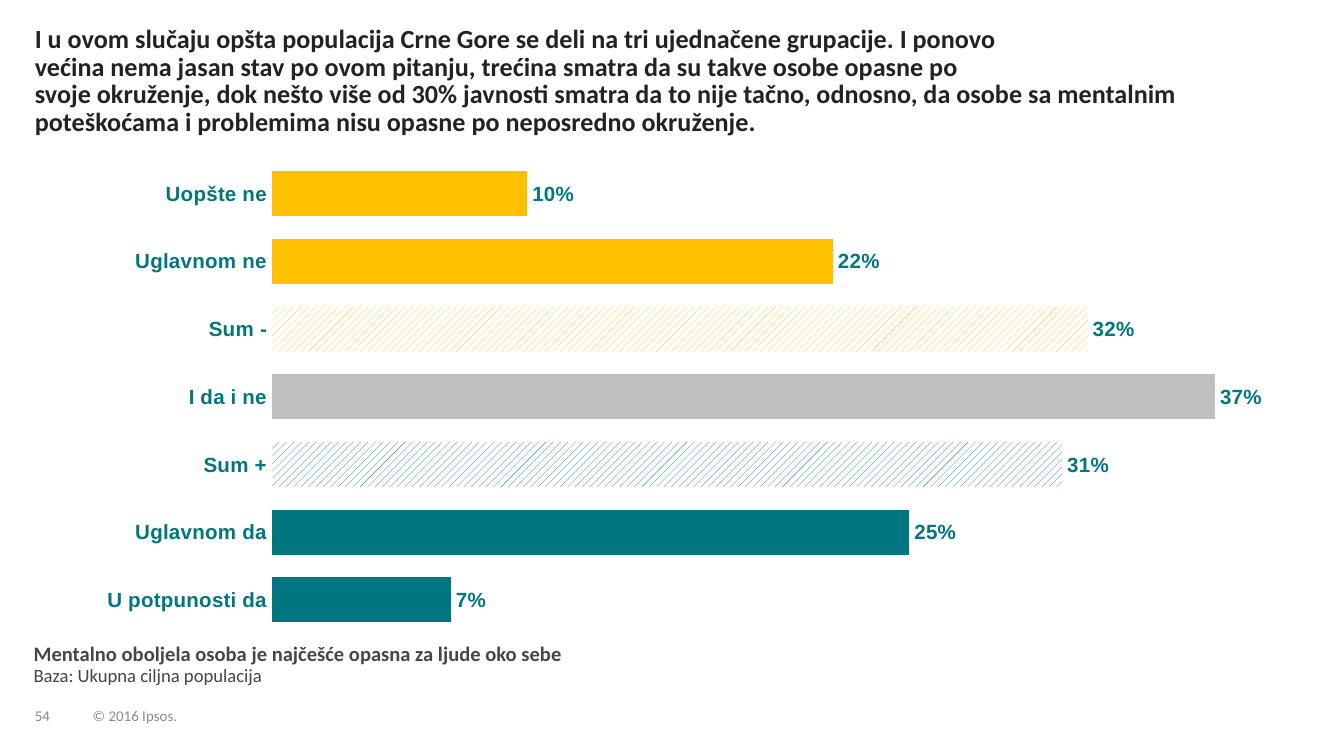
import pptx
import pptx.chart.data
import pptx.dml.color
import pptx.enum.chart
import pptx.enum.dml
import pptx.enum.text
import pptx.oxml
import pptx.oxml.ns
import pptx.util
from pptx.util import Inches

TEAL, YELLOW, GRAY = "007681", "FFC000", "BFBFBF"
HEADLINE, BODY, FOOTER = "222223", "444647", "888B8D"

ANSWERS = [
    ("Uopšte ne", 10, YELLOW, False),
    ("Uglavnom ne", 22, YELLOW, False),
    ("Sum -", 32, YELLOW, True),
    ("I da i ne", 37, GRAY, False),
    ("Sum +", 31, TEAL, True),
    ("Uglavnom da", 25, TEAL, False),
    ("U potpunosti da", 7, TEAL, False),
]


def rgb(color):
    """Turn a hex string into a colour."""
    return pptx.dml.color.RGBColor.from_string(color)


def style_font(font, name, size, color, bold=False):
    """Set the face, size, colour and weight of a font."""
    font.name = name
    font.size = pptx.util.Pt(size)
    font.bold = bold
    font.color.rgb = rgb(color)


def add_text(slide, box, text, size, color, bold=False, spacing=0.9, anchor="TOP"):
    """Add a text box without margins and return its paragraph."""
    shape = slide.shapes.add_textbox(*map(Inches, box))
    frame = shape.text_frame
    frame.margin_left = frame.margin_top = frame.margin_right = frame.margin_bottom = 0
    frame.word_wrap = True
    frame.vertical_anchor = pptx.enum.text.MSO_ANCHOR[anchor]
    paragraph = frame.paragraphs[0]
    paragraph.line_spacing = spacing
    paragraph.add_run().text = text
    style_font(paragraph.font, "Calibri", size, color, bold)
    return paragraph


def add_headline(slide, left, top, width):
    """Add the narrow opening and the full-width rest of the headline."""
    add_text(
        slide, (left, top, 7.17, 0.42),
        "I u ovom slučaju opšta populacija Crne Gore se deli na tri ujednačene grupacije. "
        "I ponovo većina nema jasan stav po ovom pitanju, trećina smatra da su takve "
        "osobe opasne po", 14, HEADLINE, True)
    add_text(
        slide, (left, top + 0.41, width, 0.42),
        "svoje okruženje, dok nešto više od 30% javnosti smatra da to nije tačno, odnosno, "
        "da osobe sa mentalnim poteškoćama i problemima nisu opasne po neposredno okruženje.",
        14, HEADLINE, True)


def place_plot(chart, x, y, width, height):
    """Fix the inner plot area as fractions of the chart."""
    plot_area = chart._chartSpace.chart.plotArea
    for layout in plot_area.findall(pptx.oxml.ns.qn("c:layout")):
        plot_area.remove(layout)
    values = "".join(
        f'<c:{tag} val="{value}"/>'
        for tag, value in (("x", x), ("y", y), ("w", width), ("h", height)))
    plot_area.insert(0, pptx.oxml.parse_xml(
        f'<c:layout {pptx.oxml.ns.nsdecls("c")}><c:manualLayout>'
        '<c:layoutTarget val="inner"/><c:xMode val="edge"/><c:yMode val="edge"/>'
        f'{values}</c:manualLayout></c:layout>'))


def add_answer_chart(slide, box):
    """Add the bar chart of answers, with hatched bars for the sums."""
    data = pptx.chart.data.CategoryChartData(number_format='0"%"')
    data.categories = [answer[0] for answer in ANSWERS]
    data.add_series("Series 1", [answer[1] for answer in ANSWERS])
    chart = slide.shapes.add_chart(
        pptx.enum.chart.XL_CHART_TYPE.BAR_CLUSTERED, *map(Inches, box), data).chart
    chart.has_legend = False
    chart.has_title = False
    style_font(chart.font, "Arial", 17, "000000", True)
    place_plot(chart, 0.186, 0.024, 0.798, 0.956)

    category_axis = chart.category_axis
    category_axis.reverse_order = True
    category_axis.major_tick_mark = pptx.enum.chart.XL_TICK_MARK.NONE
    category_axis.format.line.fill.background()
    style_font(category_axis.tick_labels.font, "Arial", 11, TEAL, True)

    value_axis = chart.value_axis
    value_axis.minimum_scale = 0
    value_axis.maximum_scale = 40
    value_axis.has_major_gridlines = False
    value_axis.visible = False

    plot = chart.plots[0]
    plot.gap_width = 50
    plot.vary_by_categories = False
    series = plot.series[0]
    series.invert_if_negative = False
    labels = series.data_labels
    labels.show_value = True
    labels.number_format = '0"%"'
    labels.number_format_is_linked = False
    labels.position = pptx.enum.chart.XL_LABEL_POSITION.OUTSIDE_END
    style_font(labels.font, "Arial", 11, TEAL, True)

    for index, (_, _, color, hatched) in enumerate(ANSWERS):
        fill = series.points[index].format.fill
        if hatched:
            fill.patterned()
            fill.pattern = pptx.enum.dml.MSO_PATTERN.WIDE_UPWARD_DIAGONAL
            fill.fore_color.rgb = rgb(color)
            fill.back_color.rgb = rgb("FFFFFF")
        else:
            fill.solid()
            fill.fore_color.rgb = rgb(color)


def add_question(slide, box):
    """Add the survey question with its base underneath."""
    paragraph = add_text(
        slide, box, "Mentalno oboljela osoba je najčešće opasna za ljude oko sebe",
        11, BODY, spacing=0.95)
    paragraph.runs[0].font.bold = True
    paragraph.add_line_break()
    base = paragraph.add_run()
    base.text = "Baza: Ukupna ciljna populacija"
    base.font.size = pptx.util.Pt(10)


def add_footer(slide, left, bottom):
    """Add the page number and the copyright line on one baseline."""
    for offset, width, height, text in (
            (0, 0.34, 0.26, "54"), (0.43, 0.76, 0.18, "© 2016 Ipsos.")):
        add_text(slide, (left + offset, bottom - height, width, height), text,
                 8, FOOTER, spacing=0.85, anchor="BOTTOM")


def main():
    """Build the slide and save it."""
    presentation = pptx.Presentation()
    presentation.slide_width = Inches(10)
    presentation.slide_height = Inches(10 * 9 / 16)
    slide = presentation.slides.add_slide(presentation.slide_layouts[6])
    add_footer(slide, 0.26, 5.39)
    add_headline(slide, 0.26, 0.19, 9.5)
    add_question(slide, (0.25, 4.78, 9.51, 0.47))
    add_answer_chart(slide, (0.26, 1.1, 9.5, 3.69))
    presentation.save("out.pptx")


if __name__ == "__main__":
    main()
